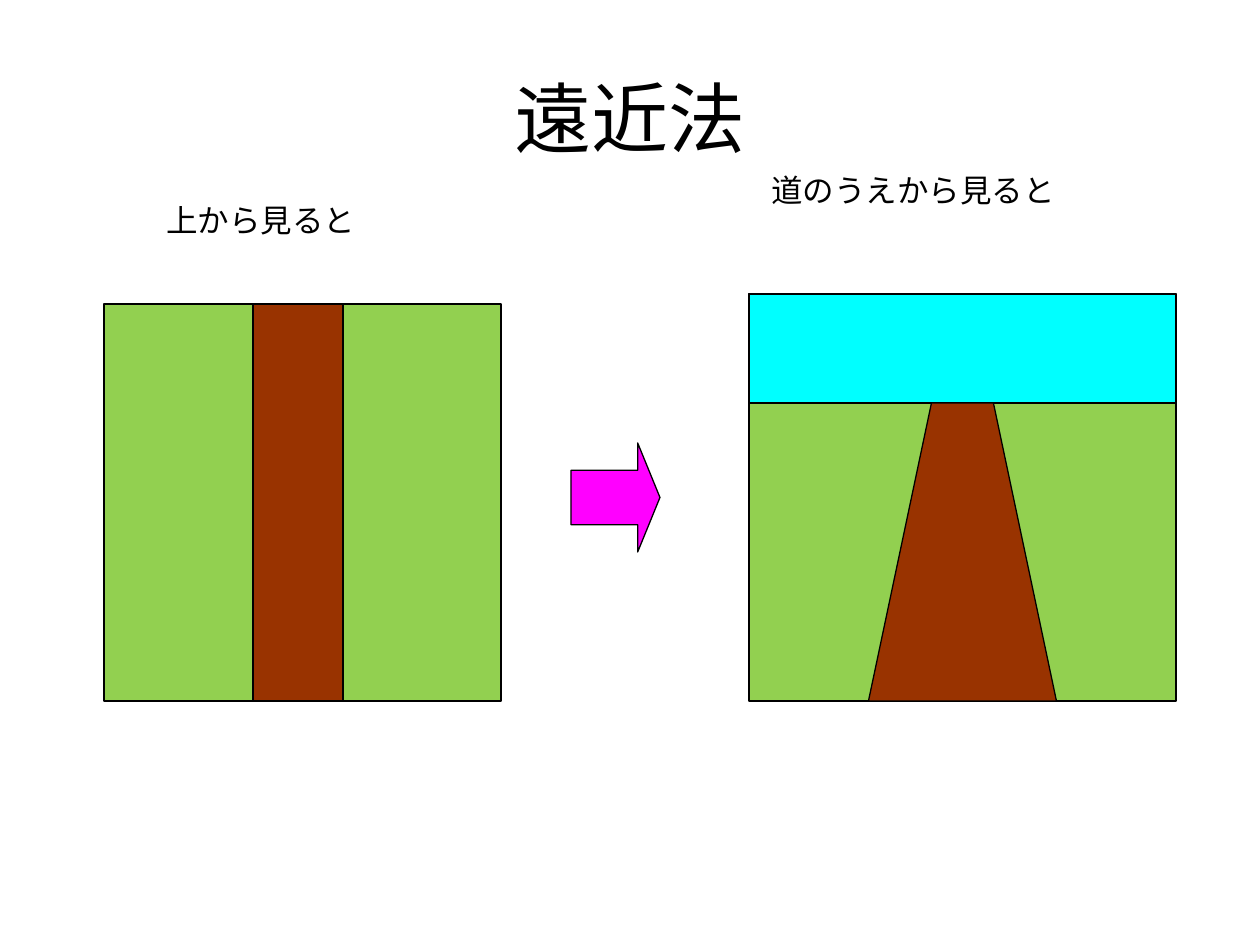
from pptx import Presentation
from pptx.dml.color import RGBColor
from pptx.enum.shapes import MSO_SHAPE
from pptx.enum.text import MSO_ANCHOR, MSO_AUTO_SIZE, PP_ALIGN
from pptx.util import Emu, Pt

COLORS = {
    "ink": "000000",
    "grass": "92D050",
    "road": "993300",
    "sky": "00FFFF",
    "arrow": "FF00FF",
}
PX_PER_INCH = 126


def px(length):
    return Emu(round(length * 914400 / PX_PER_INCH))


class Painter:
    """Holds the style and the slide being drawn."""

    def __init__(self, slide, line_width=0.75):
        self.slide = slide
        self.line_width = Pt(line_width)

    def color(self, name):
        return RGBColor.from_string(COLORS[name])

    def paint(self, shape, fill):
        shape.shadow.inherit = False
        shape.fill.solid()
        shape.fill.fore_color.rgb = self.color(fill)
        shape.line.color.rgb = self.color("ink")
        shape.line.width = self.line_width
        return shape

    def shape(self, kind, left, top, width, height, fill):
        bounds = map(px, (left, top, width, height))
        return self.paint(self.slide.shapes.add_shape(kind, *bounds), fill)

    def rectangle(self, left, top, width, height, fill):
        return self.shape(MSO_SHAPE.RECTANGLE, left, top, width, height, fill)

    def polygon(self, points, fill):
        corners = [(px(x), px(y)) for x, y in points]
        builder = self.slide.shapes.build_freeform(*corners[0])
        builder.add_line_segments(corners[1:], close=True)
        return self.paint(builder.convert_to_shape(), fill)

    def text(self, words, left, top, width, height, size, font,
             align=PP_ALIGN.LEFT, anchor=MSO_ANCHOR.TOP):
        box = self.slide.shapes.add_textbox(*map(px, (left, top, width, height)))
        frame = box.text_frame
        frame.word_wrap = True
        frame.auto_size = MSO_AUTO_SIZE.NONE
        frame.vertical_anchor = anchor
        frame.text = words
        para = frame.paragraphs[0]
        para.alignment = align
        for span in para.runs:
            span.font.size = Pt(size)
            span.font.name = font
            span.font.color.rgb = self.color("ink")
        return box


def main():
    deck = Presentation()
    deck.slide_width, deck.slide_height = px(1260), px(945)
    painter = Painter(deck.slides.add_slide(deck.slide_layouts[6]))

    # Title and captions
    painter.text("遠近法", 63, 38, 1134, 157, 44, "Calibri",
                 PP_ALIGN.CENTER, MSO_ANCHOR.MIDDLE)
    painter.text("上から見ると", 154, 195, 348, 50, 18, "Arial")
    painter.text("道のうえから見ると", 759, 165, 417, 50, 18, "Arial")

    # View from above: the road keeps its width
    ground = 701
    field_top = 304
    field_height = ground - field_top
    painter.rectangle(104, field_top, 397, field_height, "grass")
    painter.rectangle(253, field_top, 90, field_height, "road")

    # View from the road: the road narrows towards the horizon
    left, top, width = 749, 294, 427
    horizon = 403
    middle = left + width / 2
    near_half, far_half = 94, 31
    painter.rectangle(left, top, width, ground - top, "grass")
    painter.rectangle(left, top, width, horizon - top, "sky")
    painter.polygon([
        (middle + near_half, ground),
        (middle + far_half, horizon),
        (middle - far_half, horizon),
        (middle - near_half, ground),
    ], "road")

    # Arrow between the two views
    arrow = painter.shape(MSO_SHAPE.RIGHT_ARROW, 571, 443, 89, 109, "arrow")
    arrow.adjustments[0] = 0.5
    arrow.adjustments[1] = 0.25

    deck.save("out.pptx")


if __name__ == "__main__":
    main()
